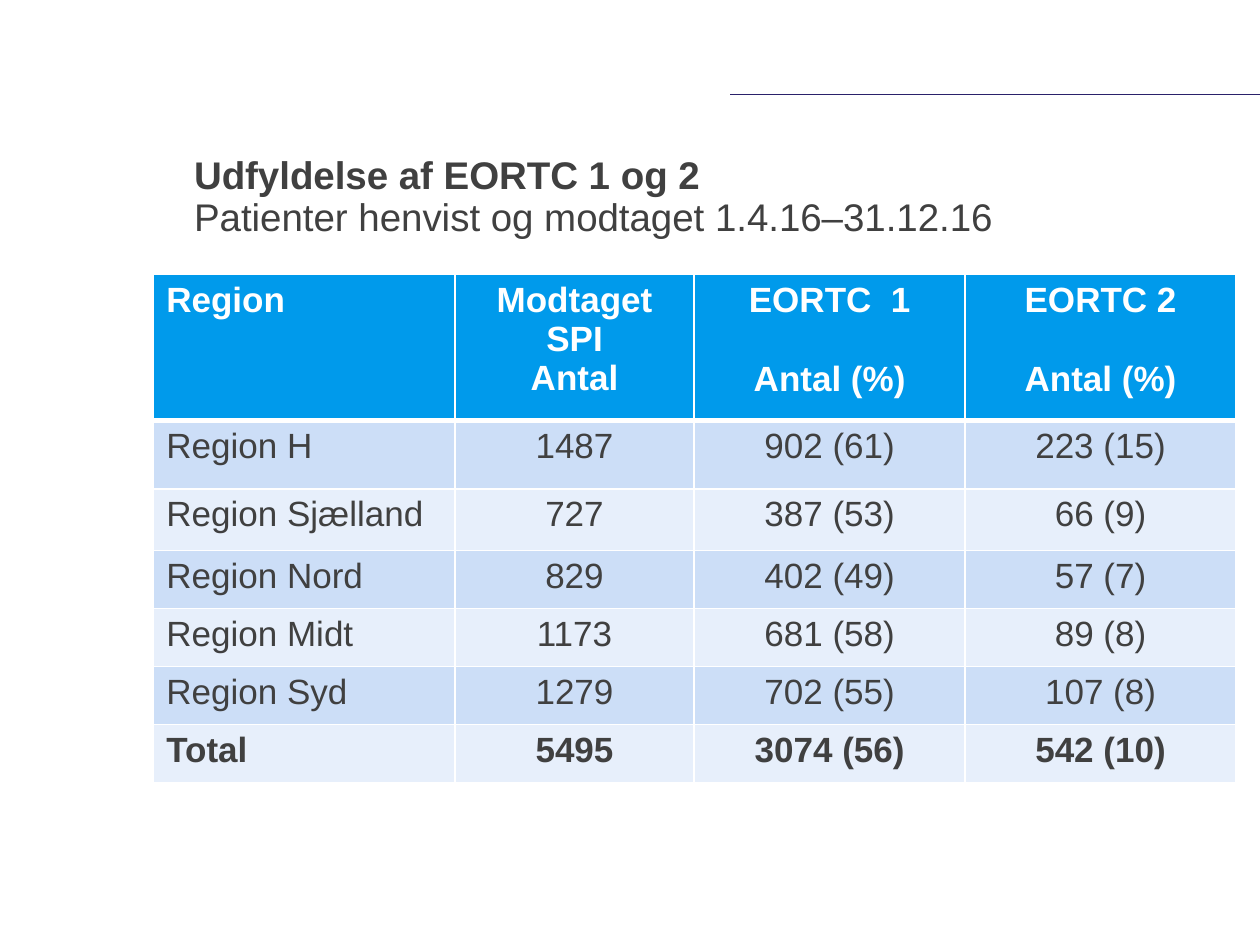
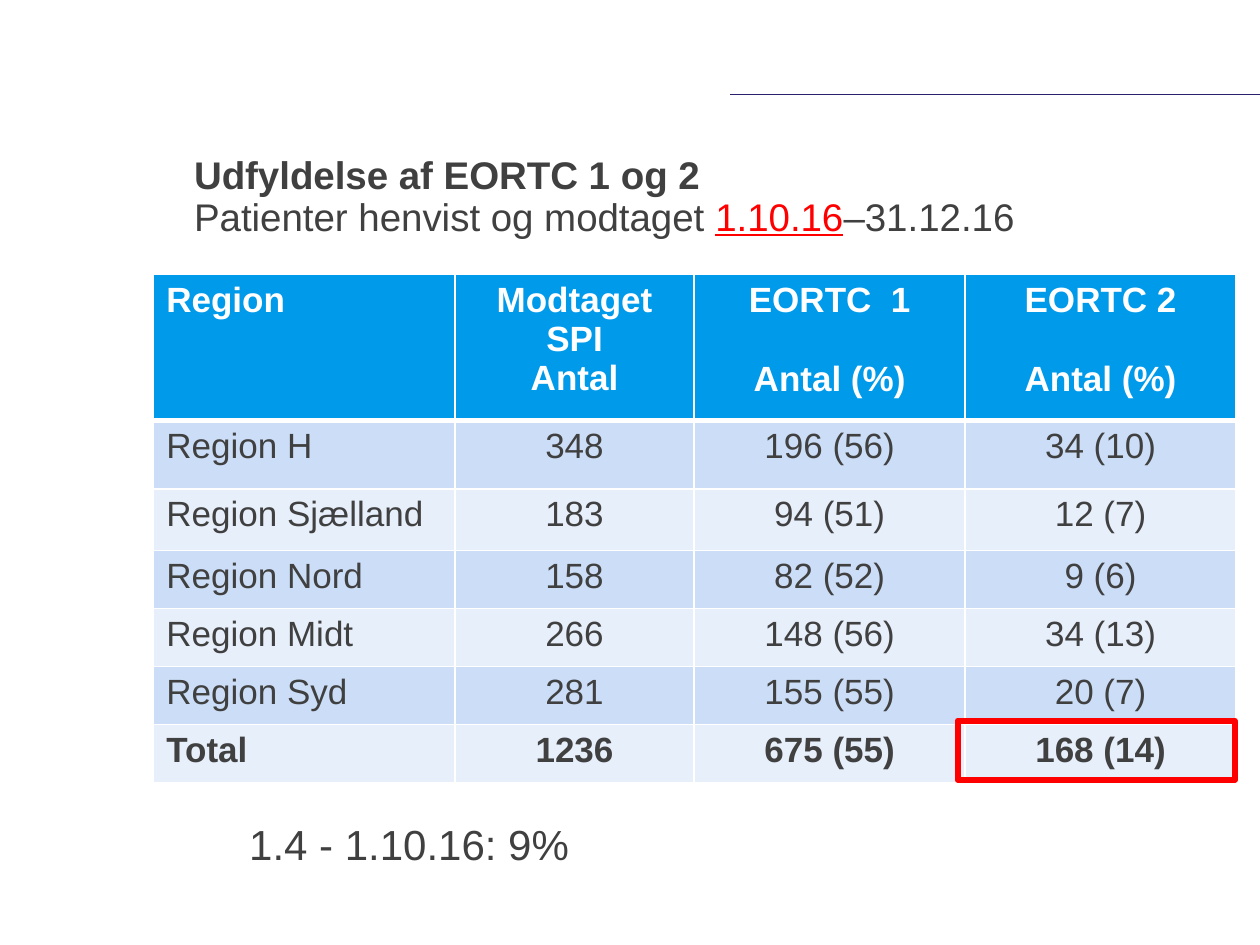
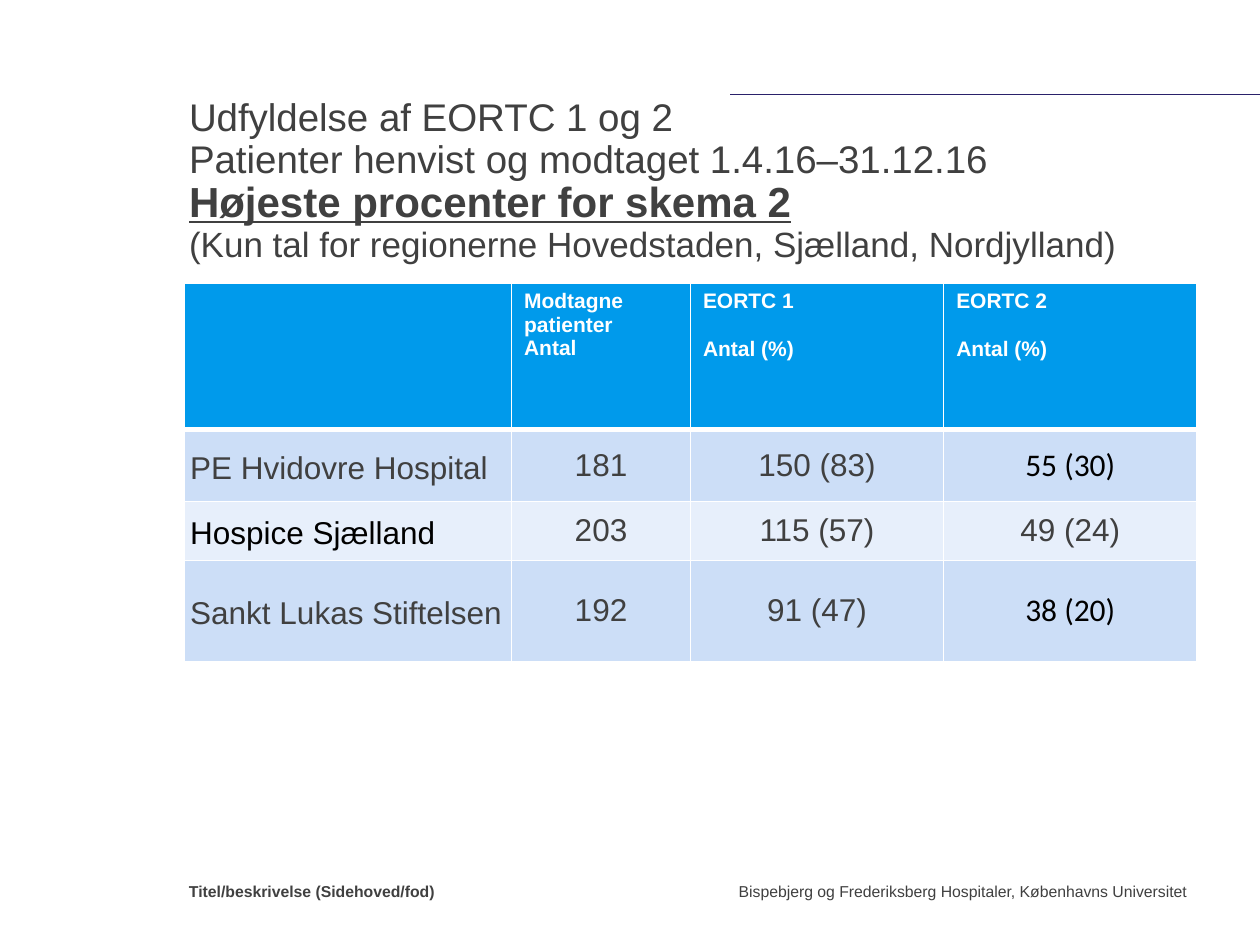
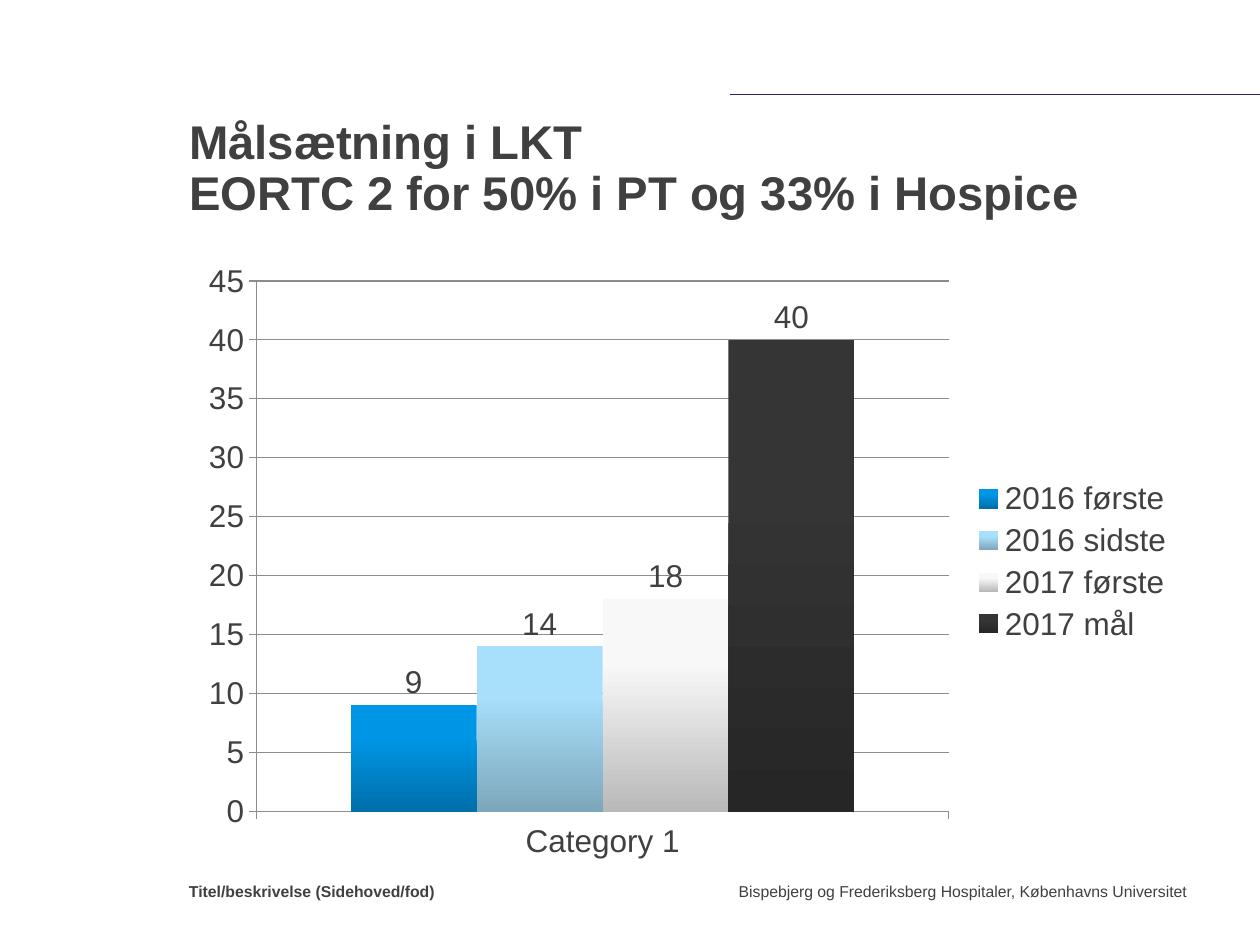
from dataclasses import dataclass, field

from lxml.etree import SubElement
from pptx import Presentation
from pptx.chart.data import CategoryChartData
from pptx.dml.color import RGBColor
from pptx.enum.chart import XL_CHART_TYPE, XL_LABEL_POSITION, XL_LEGEND_POSITION, XL_TICK_MARK
from pptx.enum.shapes import MSO_CONNECTOR, MSO_SHAPE
from pptx.enum.text import MSO_ANCHOR, PP_ALIGN
from pptx.oxml import parse_xml
from pptx.oxml.ns import nsdecls, qn
from pptx.util import Inches, Pt


@dataclass(frozen=True)
class Theme:
    font: str = "Arial"
    alt_font: str = "Calibri"
    text: str = "404040"
    white: str = "FFFFFF"
    black: str = "000000"
    red: str = "FF0000"
    rule: str = "2A216A"
    header: str = "009AEB"
    bands: tuple[str, str] = ("CCDEF7", "E7EFFB")
    grid: str = "8C8C8C"
    footer_size: float = 9
    small_size: float = 12
    chart_size: float = 18
    body_size: float = 20
    title_size: float = 22
    note_size: float = 24
    big_title_size: float = 27


T = Theme()


@dataclass(frozen=True)
class Span:
    text: str
    size: float = T.title_size
    bold: bool = False
    underline: bool = False
    color: str = T.text


@dataclass(frozen=True)
class Box:
    left: float
    top: float
    width: float
    height: float

    def emu(self) -> tuple:
        return tuple(Inches(v) for v in (self.left, self.top, self.width, self.height))


@dataclass(frozen=True)
class TableSpec:
    box: Box
    cols: list[float]
    heights: list[float]
    header: list[list[str]]
    rows: list[list[str]]
    header_size: float
    body_size: float
    header_align: PP_ALIGN
    bold_total: bool = False
    middle: bool = False
    special: dict[tuple[int, int], str] = field(default_factory=dict)


@dataclass(frozen=True)
class Bar:
    name: str
    value: int
    top: str
    bottom: str


def set_font(font, size: float, color: str = T.text, bold: bool = False, name: str = T.font) -> None:
    font.name, font.size, font.bold = name, Pt(size), bold
    font.color.rgb = RGBColor.from_string(color)


def add_rule(s) -> None:
    line = s.shapes.add_connector(MSO_CONNECTOR.STRAIGHT, Inches(10), Inches(0.75), Inches(5.79), Inches(0.75))
    line.line.color.rgb = RGBColor.from_string(T.rule)
    line.line.width = Pt(0.5)
    SubElement(line._element.spPr, qn("a:effectLst"))


def add_text(s, box: Box, lines: list[list[Span]], align=PP_ALIGN.LEFT, anchor=MSO_ANCHOR.TOP,
             spacing: float = 1.0):
    """Draw one paragraph without insets, with a line break between lines."""
    tf = s.shapes.add_textbox(*box.emu()).text_frame
    tf.word_wrap = True
    tf.vertical_anchor = anchor
    tf.margin_left = tf.margin_right = tf.margin_top = tf.margin_bottom = 0
    p = tf.paragraphs[0]
    p.alignment, p.line_spacing = align, spacing
    for i, line in enumerate(lines):
        if i:
            p.add_line_break()
        for span in line:
            r = p.add_run()
            r.text = span.text
            set_font(r.font, span.size, span.color, span.bold)
            r.font.underline = span.underline
    return tf


def add_title(s, box: Box, lines: list[list[Span]]) -> None:
    add_text(s, box, lines, anchor=MSO_ANCHOR.BOTTOM, spacing=0.9)


def add_footer(s) -> None:
    add_text(s, Box(5.16, 7, 4.26, 0.5),
             [[Span("Bispebjerg og Frederiksberg Hospitaler, Københavns Universitet", T.footer_size)]],
             PP_ALIGN.RIGHT)
    add_text(s, Box(1.5, 7, 3.5, 0.5), [[Span("Titel/beskrivelse (Sidehoved/fod)", T.footer_size, True)]])


def set_borders(cell, bottom: float) -> None:
    tcPr = cell._tc.get_or_add_tcPr()
    for i, (side, width) in enumerate({"L": 1, "R": 1, "T": 1, "B": bottom}.items()):
        tcPr.insert(i, parse_xml(
            f'<a:ln{side} {nsdecls("a")} w="{Pt(width)}"><a:solidFill>'
            f'<a:srgbClr val="{T.white}"/></a:solidFill></a:ln{side}>'))


def paint(cell, color: str, bottom: float = 1) -> None:
    cell.fill.solid()
    cell.fill.fore_color.rgb = RGBColor.from_string(color)
    set_borders(cell, bottom)


def add_header_cell(cell, lines: list[str], spec: TableSpec, align) -> None:
    """Header lines; an empty line becomes space before the next one."""
    paint(cell, T.header, 3)
    cell.text = "\n".join(line for line in lines if line)
    for p in cell.text_frame.paragraphs:
        p.alignment = align
        for r in p.runs:
            set_font(r.font, spec.header_size, T.white, True)
    if "" in lines[1:]:
        cell.text_frame.paragraphs[-1].space_before = Pt(spec.header_size * 1.15)


def add_body_cell(cell, text: str, spec: TableSpec, row: int, col: int) -> None:
    paint(cell, T.bands[row % 2])
    cell.text = text
    p = cell.text_frame.paragraphs[0]
    p.alignment = PP_ALIGN.CENTER if col else PP_ALIGN.LEFT
    if spec.middle:
        cell.vertical_anchor = MSO_ANCHOR.MIDDLE
        if col == 0:
            p.line_spacing = 1.15
            cell.margin_left = cell.margin_right = Inches(0.05)
            cell.margin_top = cell.margin_bottom = 0
    bold = spec.bold_total and row == len(spec.rows) - 1
    font = spec.special.get((row, col))
    set_font(p.runs[0].font, spec.body_size, T.black if font else T.text, bold, font or T.font)


def add_data_table(s, spec: TableSpec) -> None:
    table = s.shapes.add_table(len(spec.rows) + 1, len(spec.cols), *spec.box.emu()).table
    for column, width in zip(table.columns, spec.cols):
        column.width = Inches(width)
    for row, height in zip(table.rows, spec.heights):
        row.height = Inches(height)
    for c, lines in enumerate(spec.header):
        add_header_cell(table.cell(0, c), lines, spec, spec.header_align if c else PP_ALIGN.LEFT)
    for i, row in enumerate(spec.rows):
        for c, text in enumerate(row):
            add_body_cell(table.cell(i + 1, c), text, spec, i, c)


def region_table(values: list[list[str]]) -> TableSpec:
    names = [f"Region {n}" for n in ("H", "Sjælland", "Nord", "Midt", "Syd")] + ["Total"]
    return TableSpec(
        Box(1.22, 2.18, 8.58, 4.02), [2.39, 1.9, 2.15, 2.15], [1.16, 0.54, 0.49] + [0.46] * 4,
        [["Region"], ["Modtaget SPI", "Antal"], ["EORTC  1", "", "Antal (%)"], ["EORTC 2", "", "Antal (%)"]],
        [[name, *row] for name, row in zip(names, values)],
        T.body_size, T.body_size, PP_ALIGN.CENTER, bold_total=True)


def region_slide(s, period: list[Span], values: list[list[str]]) -> None:
    add_title(s, Box(1.54, 1.07, 7.92, 0.83),
              [[Span("Udfyldelse af EORTC 1 og 2", bold=True)],
               [Span("Patienter henvist og modtaget "), *period]])
    add_data_table(s, region_table(values))


def whole_period_slide(s) -> None:
    region_slide(s, [Span("1.4.16–31.12.16")], [
        ["1487", "902 (61)", "223 (15)"],
        ["727", "387 (53)", "66 (9)"],
        ["829", "402 (49)", "57 (7)"],
        ["1173", "681 (58)", "89 (8)"],
        ["1279", "702 (55)", "107 (8)"],
        ["5495", "3074 (56)", "542 (10)"]])


def last_quarter_slide(s) -> None:
    region_slide(s, [Span("1.10.16", underline=True, color=T.red), Span("–31.12.16")], [
        ["348", "196 (56)", "34 (10)"],
        ["183", "94 (51)", "12 (7)"],
        ["158", "82 (52)", "9 (6)"],
        ["266", "148 (56)", "34 (13)"],
        ["281", "155 (55)", "20 (7)"],
        ["1236", "675 (55)", "168 (14)"]])
    frame = s.shapes.add_shape(MSO_SHAPE.RECTANGLE, *Box(7.6, 5.72, 2.2, 0.47).emu())
    frame.shadow.inherit = False
    frame.fill.background()
    frame.line.color.rgb = RGBColor.from_string(T.red)
    frame.line.width = Pt(3.5)
    tf = s.shapes.add_textbox(*Box(1.88, 6.45, 2.77, 0.5).emu()).text_frame
    tf.word_wrap = False
    tf.text = "1.4 - 1.10.16: 9%"
    set_font(tf.paragraphs[0].runs[0].font, T.note_size)


def highest_share_slide(s) -> None:
    add_title(s, Box(1.5, 0.92, 7.92, 1.18), [
        [Span("Udfyldelse af EORTC 1 og 2")],
        [Span("Patienter henvist og modtaget 1.4.16–31.12.16")],
        [Span("Højeste procenter for skema 2", T.note_size, True, True)],
        [Span("(Kun tal for regionerne Hovedstaden, Sjælland, Nordjylland)", T.body_size)]])
    add_footer(s)
    add_data_table(s, TableSpec(
        Box(1.46, 2.25, 8.03, 3), [2.6, 1.42, 2.01, 2.01], [1.16, 0.57, 0.47, 0.8],
        [[], ["Modtagne patienter", "Antal"], ["EORTC 1", "", "Antal (%)"], ["EORTC 2", "", "Antal (%)"]],
        [["PE Hvidovre Hospital", "181", "150 (83)", "55 (30)"],
         ["Hospice Sjælland", "203", "115 (57)", "49 (24)"],
         ["Sankt Lukas Stiftelsen", "192", "91 (47)", "38 (20)"]],
        T.small_size, T.chart_size, PP_ALIGN.LEFT, middle=True,
        special={(0, 3): T.alt_font, (1, 0): T.font, (2, 3): T.alt_font}))


def add_bar_chart(s, box: Box, bars: list[Bar]) -> None:
    data = CategoryChartData()
    data.categories = ["Category 1"]
    for bar in bars:
        data.add_series(bar.name, [bar.value])
    chart = s.shapes.add_chart(XL_CHART_TYPE.COLUMN_CLUSTERED, *box.emu(), data).chart
    set_font(chart.font, T.chart_size)
    chart.has_title = False
    chart.has_legend = True
    chart.legend.position = XL_LEGEND_POSITION.RIGHT
    chart.legend.include_in_layout = False

    values = chart.value_axis
    values.minimum_scale, values.maximum_scale, values.major_unit = 0, 45, 5
    values.has_major_gridlines = True
    for axis in (chart.category_axis, values):
        axis.major_tick_mark = XL_TICK_MARK.OUTSIDE
    for line in (chart.category_axis.format.line, values.format.line, values.major_gridlines.format.line):
        line.color.rgb = RGBColor.from_string(T.grid)
        line.width = Pt(0.75)

    plot = chart.plots[0]
    plot.gap_width, plot.overlap, plot.vary_by_categories = 150, 0, False
    for series, bar in zip(plot.series, bars):
        fill = series.format.fill
        fill.gradient()
        fill.gradient_angle = 270
        for stop, color, position in zip(fill.gradient_stops, (bar.top, bar.bottom), (0.3, 1)):
            stop.color.rgb = RGBColor.from_string(color)
            stop.position = position
        labels = series.data_labels
        labels.show_value = True
        labels.position = XL_LABEL_POSITION.OUTSIDE_END
        set_font(labels.font, T.chart_size)


def target_slide(s) -> None:
    add_title(s, Box(1.5, 0.92, 7.92, 0.83), [
        [Span(line, T.big_title_size, True)]
        for line in ("Målsætning i LKT", "EORTC 2 for 50% i PT og 33% i Hospice")])
    add_bar_chart(s, Box(1.5, 1.99, 7.92, 4.93), [
        Bar("2016 første", 9, "0096E6", "006FAA"),
        Bar("2016 sidste", 14, "A8DFFA", "7DA7BB"),
        Bar("2017 første", 18, "F8F8F8", "B9B9B9"),
        Bar("2017 mål", 40, "353535", "262626")])
    add_footer(s)


def main() -> None:
    prs = Presentation()
    prs.slide_width, prs.slide_height = Inches(10), Inches(7.5)
    for build in (whole_period_slide, last_quarter_slide, highest_share_slide, target_slide):
        s = prs.slides.add_slide(prs.slide_layouts[6])
        add_rule(s)
        build(s)
    prs.save("out.pptx")


if __name__ == "__main__":
    main()
